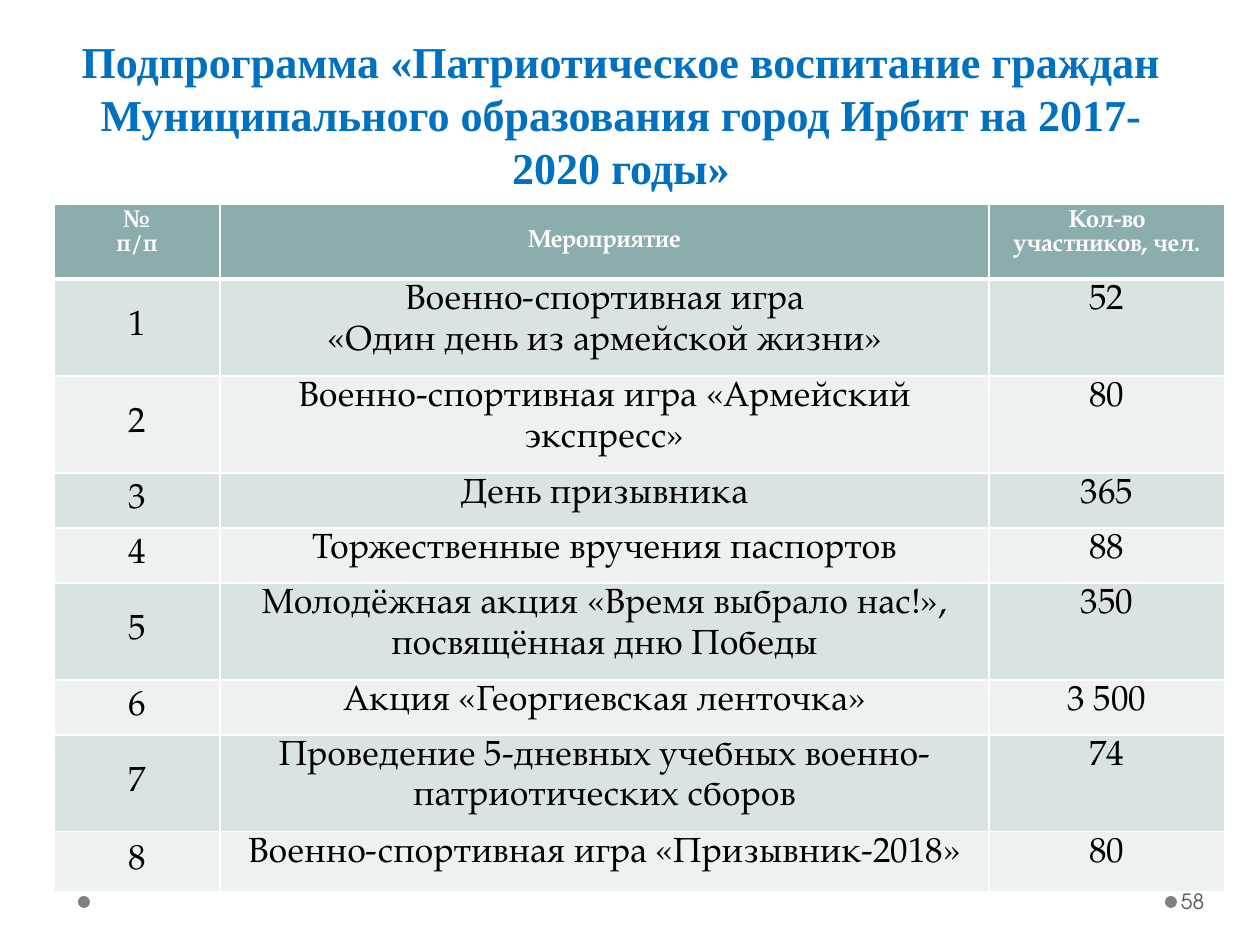
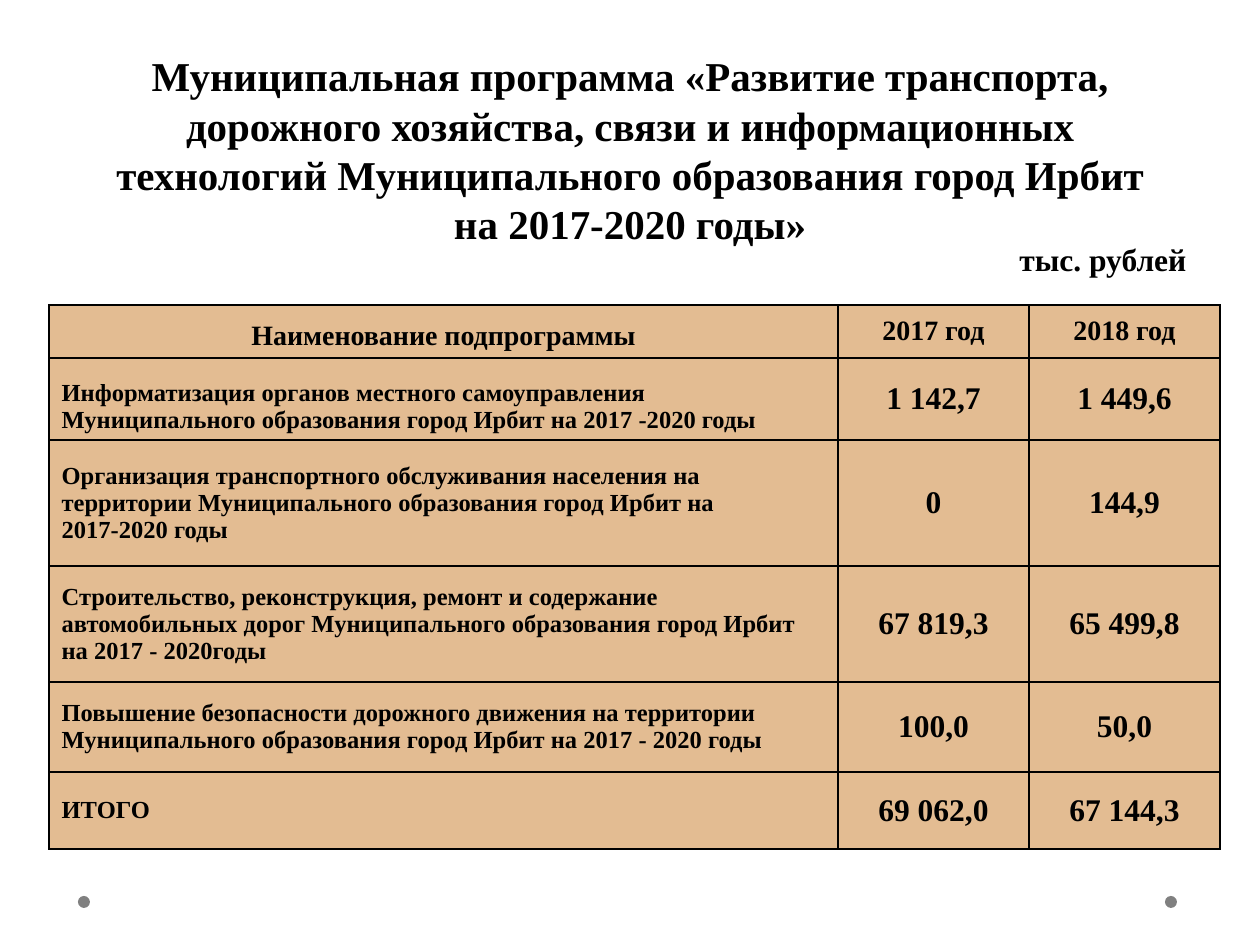
from lxml.etree import SubElement
from pptx import Presentation
from pptx.dml.color import RGBColor
from pptx.enum.shapes import MSO_SHAPE
from pptx.enum.text import MSO_ANCHOR as ANCHOR, MSO_AUTO_SIZE as AUTO, PP_ALIGN as ALIGN
from pptx.oxml.ns import qn
from pptx.util import Pt

PX = 914400 / 126
SERIF, BOOK, SANS = "Times New Roman", "TeX Gyre Pagella", "TeX Gyre Adventor"
BLACK = RGBColor(0x00, 0x00, 0x00)
WHITE = RGBColor(0xFF, 0xFF, 0xFF)
BLUE = RGBColor(0x00, 0x70, 0xC0)
GRAY = RGBColor(0x80, 0x80, 0x80)
DARK_GRAY = RGBColor(0x59, 0x59, 0x59)
TEAL = RGBColor(0x8C, 0xAD, 0xAE)
BANDS = RGBColor(0xDA, 0xE3, 0xE3), RGBColor(0xEE, 0xF1, 0xF2)
SAND = RGBColor(0xE3, 0xBC, 0x92)

EVENTS_TITLE = ("Подпрограмма «Патриотическое воспитание граждан "
                "Муниципального образования город Ирбит на 2017-2020 годы»")
EVENTS_HEAD = ["№\nп/п", "Мероприятие", "Кол-во участников, чел."]
EVENTS = [
    ("Военно-спортивная игра\n«Один день из армейской жизни»", "52"),
    ("Военно-спортивная игра «Армейский экспресс»", "80"),
    ("День призывника", "365"),
    ("Торжественные вручения паспортов", "88"),
    ("Молодёжная акция «Время выбрало нас!», посвящённая дню Победы", "350"),
    ("Акция «Георгиевская ленточка»", "3 500"),
    ("Проведение 5-дневных учебных военно-патриотических сборов", "74"),
    ("Военно-спортивная игра «Призывник-2018»", "80"),
]
EVENT_COLS = [166, 769, 236]
EVENT_ROWS = [75, 97, 97, 55, 55, 97, 55, 97, 60]

BUDGET_TITLE = ("Муниципальная программа «Развитие транспорта, дорожного хозяйства, "
                "связи и информационных технологий Муниципального образования "
                "город Ирбит\vна 2017-2020 годы»")
BUDGET = [
    ("Наименование подпрограммы", "2017 год", "2018 год"),
    ("Информатизация органов местного самоуправления "
     "Муниципального образования город Ирбит на 2017 -2020 годы", "1 142,7", "1 449,6"),
    ("Организация транспортного обслуживания населения на территории "
     "Муниципального образования город Ирбит на\v2017-2020 годы", "0", "144,9"),
    ("Строительство, реконструкция, ремонт и содержание автомобильных дорог "
     "Муниципального образования город Ирбит на 2017 - 2020годы", "67 819,3", "65 499,8"),
    ("Повышение безопасности дорожного движения на территории "
     "Муниципального образования город Ирбит на 2017 - 2020 годы", "100,0", "50,0"),
    ("ИТОГО", "69 062,0", "67 144,3"),
]
BUDGET_COLS = [789, 191, 191]
BUDGET_ROWS = [53, 82, 126, 116, 90, 77]


def px(*lengths):
    return [round(n * PX) for n in lengths]


def write(tf, text, font, size, color, bold=False, align=ALIGN.LEFT, spacing=None):
    """Fill a text frame; a newline starts a paragraph, a vertical tab breaks a line."""
    for i, para in enumerate(text.split("\n")):
        p = tf.add_paragraph() if i else tf.paragraphs[0]
        p.alignment = align
        if spacing:
            p.line_spacing = spacing
        for j, line in enumerate(para.split("\v")):
            if j:
                p.add_line_break()
            r = p.add_run()
            r.text = line
            r.font.name, r.font.size, r.font.bold = font, Pt(size), bold
            r.font.color.rgb = color


def add_titled_slide(prs, title, box, size, color):
    s = prs.slides.add_slide(prs.slide_layouts[5])
    sp = s.shapes.title
    sp.left, sp.top, sp.width, sp.height = px(*box)
    tf = sp.text_frame
    tf.word_wrap, tf.auto_size, tf.vertical_anchor = True, AUTO.NONE, ANCHOR.BOTTOM
    write(tf, title, SERIF, size, color, True, ALIGN.CENTER, 1.0)
    return s


def add_text_box(s, box, text, font, size, color, bold=False, wrap=False):
    tf = s.shapes.add_textbox(*px(*box)).text_frame
    tf.word_wrap = wrap
    write(tf, text, font, size, color, bold)
    return tf


def add_grid(s, left, top, cols, rows):
    frame = s.shapes.add_table(len(rows), len(cols), *px(left, top, sum(cols), sum(rows)))
    for col, width in zip(frame.table.columns, px(*cols)):
        col.width = width
    for row, height in zip(frame.table.rows, px(*rows)):
        row.height = height
    return frame


def fill_cell(cell, fill, anchor, text, *style):
    cell.fill.solid()
    cell.fill.fore_color.rgb = fill
    cell.vertical_anchor = anchor
    write(cell.text_frame, text, *style)


def draw_borders(frame, color, head_rule=1):
    """Rule every cell at 1 pt, with head_rule points below the header row."""
    for i, row in enumerate(frame.element.iter(qn("a:tr"))):
        for tc_pr in row.iter(qn("a:tcPr")):
            widths = {"L": 1, "R": 1, "T": head_rule if i == 1 else 1,
                      "B": head_rule if i == 0 else 1}
            for at, (side, width) in enumerate(widths.items()):
                ln = SubElement(tc_pr, qn(f"a:ln{side}"), w=str(Pt(width)))
                SubElement(SubElement(ln, qn("a:solidFill")), qn("a:srgbClr"), val=str(color))
                tc_pr.insert(at, ln)


def add_layout_dots(s):
    """Place the two footer dots on the layout shared by the slides."""
    for left in (78, 1165):
        dot = s.shapes.add_shape(MSO_SHAPE.OVAL, *px(left, 896, 12, 12))
        dot.shadow.inherit = False
        dot.fill.solid()
        dot.fill.fore_color.rgb = GRAY
        dot.line.fill.background()
        s.slide_layout.shapes.element.append(dot.element)


def build_events(prs):
    s = add_titled_slide(prs, EVENTS_TITLE, (54, 16, 1134, 184), 25.2, BLUE)
    add_layout_dots(s)
    frame = add_grid(s, 54, 204, EVENT_COLS, EVENT_ROWS)
    table = frame.table
    for c, text in enumerate(EVENTS_HEAD):
        anchor = ANCHOR.MIDDLE if c == 1 else ANCHOR.TOP
        fill_cell(table.cell(0, c), TEAL, anchor, text, BOOK, 14, WHITE, True, ALIGN.CENTER)
    for n, event in enumerate(EVENTS, 1):
        for c, text in enumerate((str(n), *event)):
            cell = table.cell(n, c)
            anchor, spacing = (ANCHOR.TOP, 1.15) if c else (ANCHOR.MIDDLE, None)
            if c:
                cell.margin_left, cell.margin_top, cell.margin_right, cell.margin_bottom = px(9, 0, 9, 0)
            fill_cell(cell, BANDS[(n - 1) % 2], anchor, text,
                      BOOK, 20, BLACK, False, ALIGN.CENTER, spacing)
    draw_borders(frame, WHITE, 3)

    tf = add_text_box(s, (1177, 876, 77, 50), "58", SANS, 12, DARK_GRAY, wrap=True)
    tf.vertical_anchor = ANCHOR.MIDDLE
    tf.margin_left, tf.margin_right = px(4, 6)


def build_budget(prs):
    s = add_titled_slide(prs, BUDGET_TITLE, (63, 39, 1134, 215), 23.4, BLACK)
    frame = add_grid(s, 49, 305, BUDGET_COLS, BUDGET_ROWS)
    for i, row in enumerate(BUDGET):
        for c, text in enumerate(row):
            size = 16 if i == 0 else 18 if c else 14
            anchor = ANCHOR.BOTTOM if c == 0 and i < 2 else ANCHOR.MIDDLE
            align = ALIGN.CENTER if c or i == 0 else ALIGN.LEFT
            fill_cell(frame.table.cell(i, c), SAND, anchor, text, SERIF, size, BLACK, True, align)
    draw_borders(frame, BLACK)
    add_text_box(s, (1007, 234, 194, 50), "тыс. рублей", SERIF, 18, BLACK, True)


def main():
    prs = Presentation()
    prs.slide_width, prs.slide_height = px(1260, 945)
    build_events(prs)
    build_budget(prs)
    prs.save("out.pptx")


if __name__ == "__main__":
    main()
